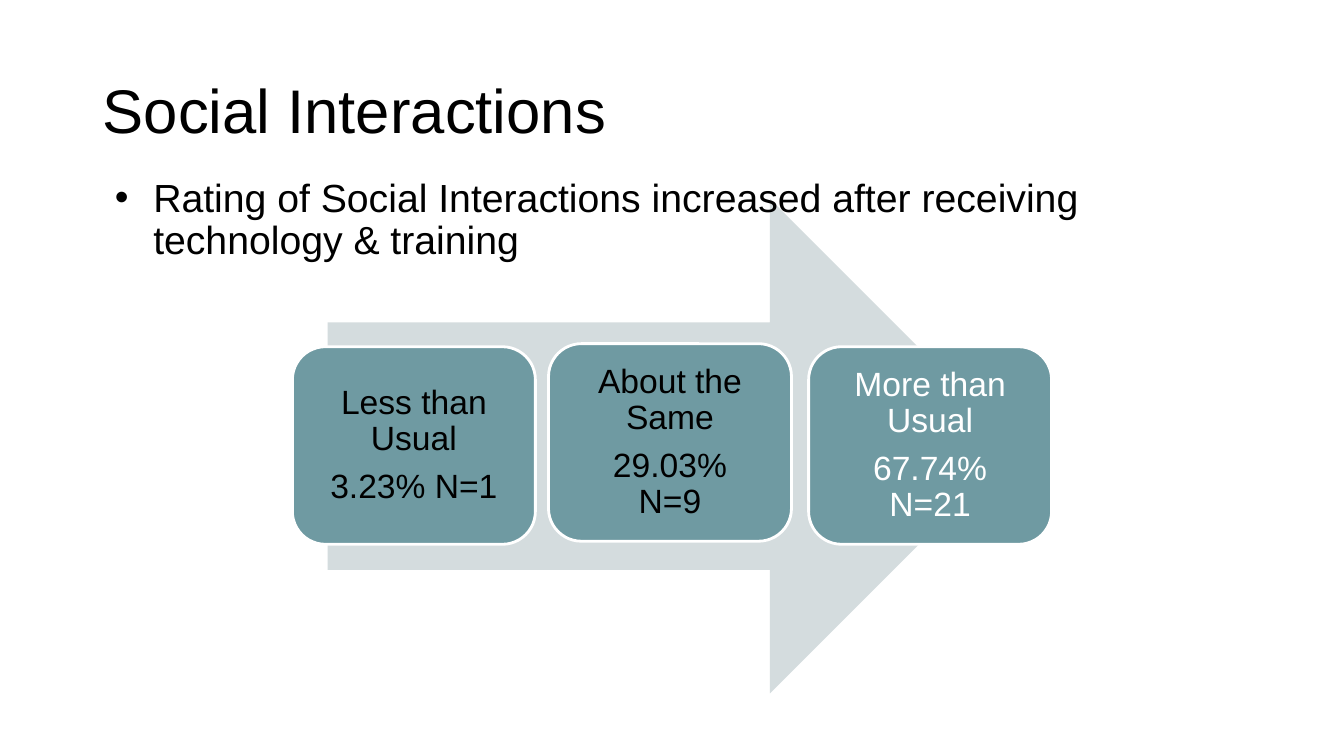
from lxml.etree import SubElement
from pptx import Presentation
from pptx.dml.color import RGBColor
from pptx.enum.shapes import MSO_SHAPE
from pptx.enum.text import MSO_ANCHOR, MSO_AUTO_SIZE, PP_ALIGN
from pptx.oxml.ns import qn
from pptx.util import Inches, Pt

COLORS = {"arrow": "D4DCDE", "card": "6F9AA2", "light": "FFFFFF", "dark": "000000"}

deck = Presentation()
deck.slide_width, deck.slide_height = Inches(13.33), Inches(7.5)
page = deck.slides.add_slide(deck.slide_layouts[1])


def place(box, left, top, width, height):
    box.left, box.top = Inches(left), Inches(top)
    box.width, box.height = Inches(width), Inches(height)


def style(para, size, color, align, before=0):
    para.alignment = align
    para.line_spacing = 0.9
    para.space_before = Pt(before)
    for span in para.runs:
        span.font.name = "Arial"
        span.font.size = Pt(size)
        span.font.color.rgb = RGBColor.from_string(COLORS[color])


# Title and bullet
title, body = page.shapes.title, page.placeholders[1]
place(title, 0.92, 0.4, 11.5, 1.45)
place(body, 0.92, 1.72, 11.5, 4.76)
title.text_frame.text = "Social Interactions"
body.text_frame.text = (
    "Rating of Social Interactions increased after receiving technology & training"
)
for box, size, anchor in ((title, 44, MSO_ANCHOR.MIDDLE), (body, 28, MSO_ANCHOR.TOP)):
    box.text_frame.vertical_anchor = anchor
    box.text_frame.auto_size = MSO_AUTO_SIZE.NONE
    style(box.text_frame.paragraphs[0], size, "dark", PP_ALIGN.LEFT)

bullet = body.text_frame.paragraphs[0]._p.get_or_add_pPr()
bullet.set("marL", str(Inches(0.5)))
bullet.set("indent", str(Inches(-0.38)))
SubElement(bullet, qn("a:buFont"), typeface="Arial")
SubElement(bullet, qn("a:buChar"), char="•")

# Arrow behind the cards
arrow = page.shapes.add_shape(
    MSO_SHAPE.RIGHT_ARROW, Inches(3.25), Inches(1.97), Inches(6.84), Inches(4.91)
)
arrow.shadow.inherit = False
arrow.fill.solid()
arrow.fill.fore_color.rgb = RGBColor.from_string(COLORS["arrow"])
arrow.line.fill.background()

# Rating cards, the middle one slightly raised
ratings = [
    ("Less than Usual", "3.23% N=1", "dark", 2.9, 3.44),
    ("About the Same", "29.03%\vN=9", "dark", 5.44, 3.41),
    ("More than Usual", "67.74%\vN=21", "light", 8.02, 3.44),
]
for rating, share, color, left, top in ratings:
    card = page.shapes.add_shape(
        MSO_SHAPE.ROUNDED_RECTANGLE, Inches(left), Inches(top), Inches(2.41), Inches(1.96)
    )
    card.shadow.inherit = False
    card.fill.solid()
    card.fill.fore_color.rgb = RGBColor.from_string(COLORS["card"])
    card.line.color.rgb = RGBColor.from_string(COLORS["light"])
    card.line.width = Pt(2)
    frame = card.text_frame
    frame.word_wrap = True
    frame.vertical_anchor = MSO_ANCHOR.MIDDLE
    frame.margin_left = frame.margin_right = Inches(0.1)
    frame.margin_top = frame.margin_bottom = Inches(0.1)
    frame.text = f"{rating}\n{share}"
    for para, before in zip(frame.paragraphs, (0, 8.4)):
        style(para, 24, color, PP_ALIGN.CENTER, before)

# Bring the title and bullet in front of the arrow
for box in (title, body):
    page.shapes._spTree.append(box._element)

deck.save("out.pptx")
